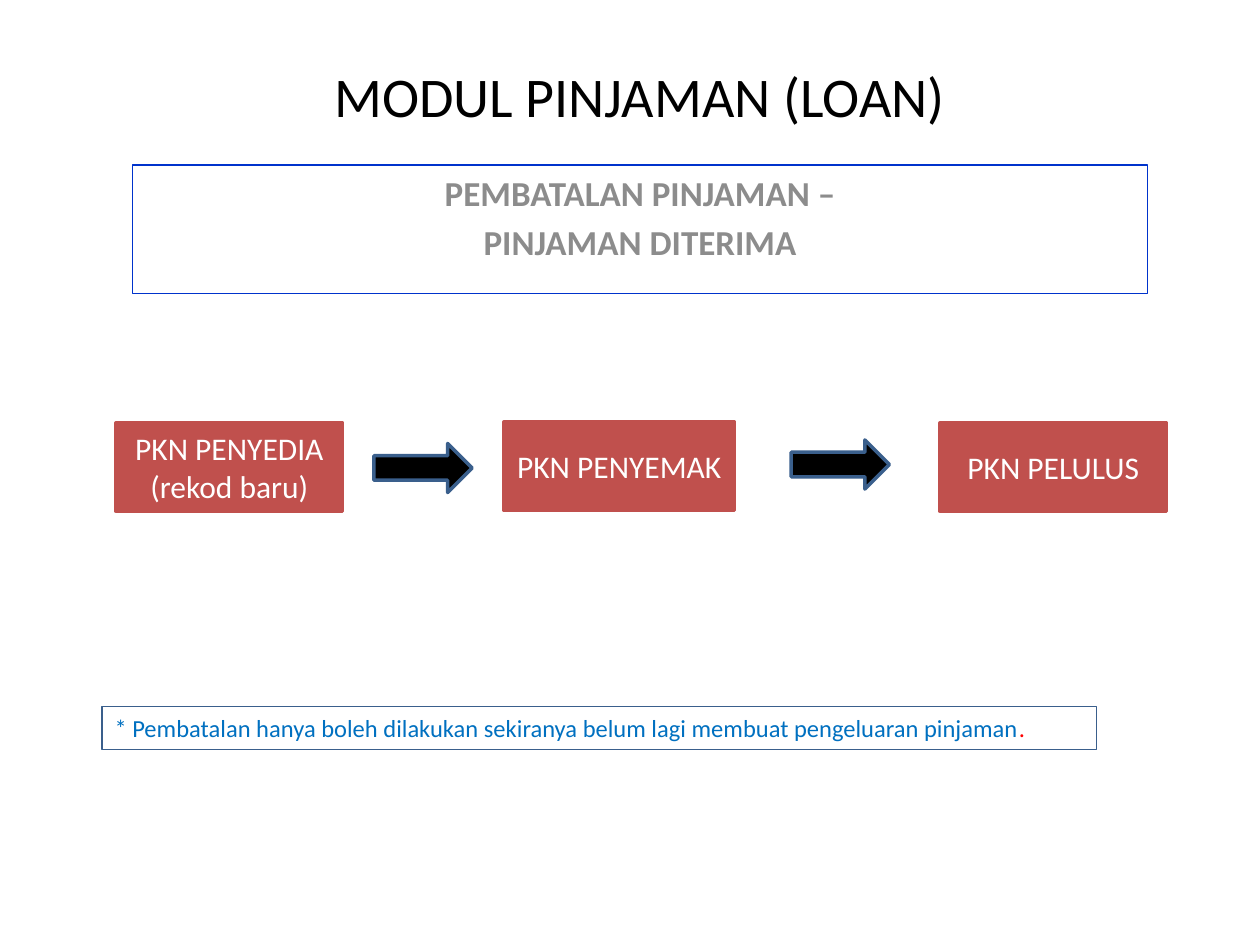
from pptx import Presentation
from pptx.dml.color import RGBColor
from pptx.enum.shapes import MSO_SHAPE as Shape
from pptx.enum.text import MSO_ANCHOR as Anchor, PP_ALIGN as Align
from pptx.util import Cm, Pt

BLACK = RGBColor(0x00, 0x00, 0x00)
WHITE = RGBColor(0xFF, 0xFF, 0xFF)
GREY = RGBColor(0x8C, 0x8C, 0x8C)
RED = RGBColor(0xFF, 0x00, 0x00)
BRICK = RGBColor(0xC0, 0x50, 0x4D)
BLUE = RGBColor(0x00, 0x70, 0xC0)
BANNER_BLUE = RGBColor(0x00, 0x33, 0xCC)
STEEL = RGBColor(0x3A, 0x5F, 0x8C)
FONT = "Calibri"


def add_outlined(slide, kind, box, line_color, line_width, fill=None):
    """Add a preset shape; box is left, top, width, height in centimetres."""
    shape = slide.shapes.add_shape(kind, *map(Cm, box))
    shape.shadow.inherit = False
    if fill is None:
        shape.fill.background()
    else:
        shape.fill.solid()
        shape.fill.fore_color.rgb = fill
    shape.line.color.rgb = line_color
    shape.line.width = Pt(line_width)
    return shape


def write(shape, text, size, color, align=Align.CENTER, anchor=Anchor.TOP,
          bold=False, space_before=0):
    frame = shape.text_frame
    frame.word_wrap = True
    frame.vertical_anchor = anchor
    frame.text = text
    for paragraph in frame.paragraphs:
        paragraph.alignment = align
        paragraph.space_before = Pt(space_before)
        for run in paragraph.runs:
            style_run(run, size, color, bold)
    return frame


def style_run(run, size, color, bold=False):
    run.font.name = FONT
    run.font.size = Pt(size)
    run.font.bold = bold
    run.font.color.rgb = color


def add_title(slide, box):
    title = slide.shapes.add_textbox(*map(Cm, box))
    write(title, "MODUL PINJAMAN (LOAN)", 32, BLACK)


def add_banner(slide, box):
    banner = add_outlined(slide, Shape.RECTANGLE, box, BANNER_BLUE, 0.75)
    write(banner, "PEMBATALAN PINJAMAN –\nPINJAMAN DITERIMA", 20, GREY,
          bold=True, space_before=4)


def add_flow(slide, box):
    """Three approval steps with an arrow between each pair."""
    left, top, _, height = box
    steps = [
        ("PKN PENYEDIA\n(rekod baru)", 0, 0.02, 4.57),
        ("PKN PENYEMAK", 7.82, 0, 4.65),
        ("PKN PELULUS", 16.61, 0.02, 4.57),
    ]
    for label, dx, dy, width in steps:
        step = add_outlined(slide, Shape.RECTANGLE,
                            (left + dx, top + dy, width, height), BRICK, 2, BRICK)
        frame = write(step, label, 18, WHITE, anchor=Anchor.MIDDLE)
        frame.margin_left = frame.margin_right = Cm(0.13)
    for dx, dy in [(5.2, 0.43), (13.61, 0.36)]:
        add_outlined(slide, Shape.RIGHT_ARROW,
                     (left + dx, top + dy, 1.98, 0.99), STEEL, 2, BLACK)


def add_note(slide, box):
    note = add_outlined(slide, Shape.RECTANGLE, box, STEEL, 0.75)
    frame = write(
        note,
        "* Pembatalan hanya boleh dilakukan sekiranya belum lagi membuat"
        " pengeluaran pinjaman",
        14, BLUE, align=Align.LEFT)
    full_stop = frame.paragraphs[0].add_run()
    full_stop.text = "."
    style_run(full_stop, 14, RED)


def main():
    deck = Presentation()
    deck.slide_width, deck.slide_height = Cm(25.4), Cm(19.05)
    slide = deck.slides.add_slide(deck.slide_layouts[6])
    add_title(slide, (4.9, 1.12, 16, 1.63))
    add_banner(slide, (2.67, 3.33, 20.47, 2.59))
    add_flow(slide, (2.34, 8.51, 21.18, 1.78))
    add_note(slide, (2.06, 14.25, 20.04, 0.86))
    deck.save("out.pptx")


if __name__ == "__main__":
    main()
